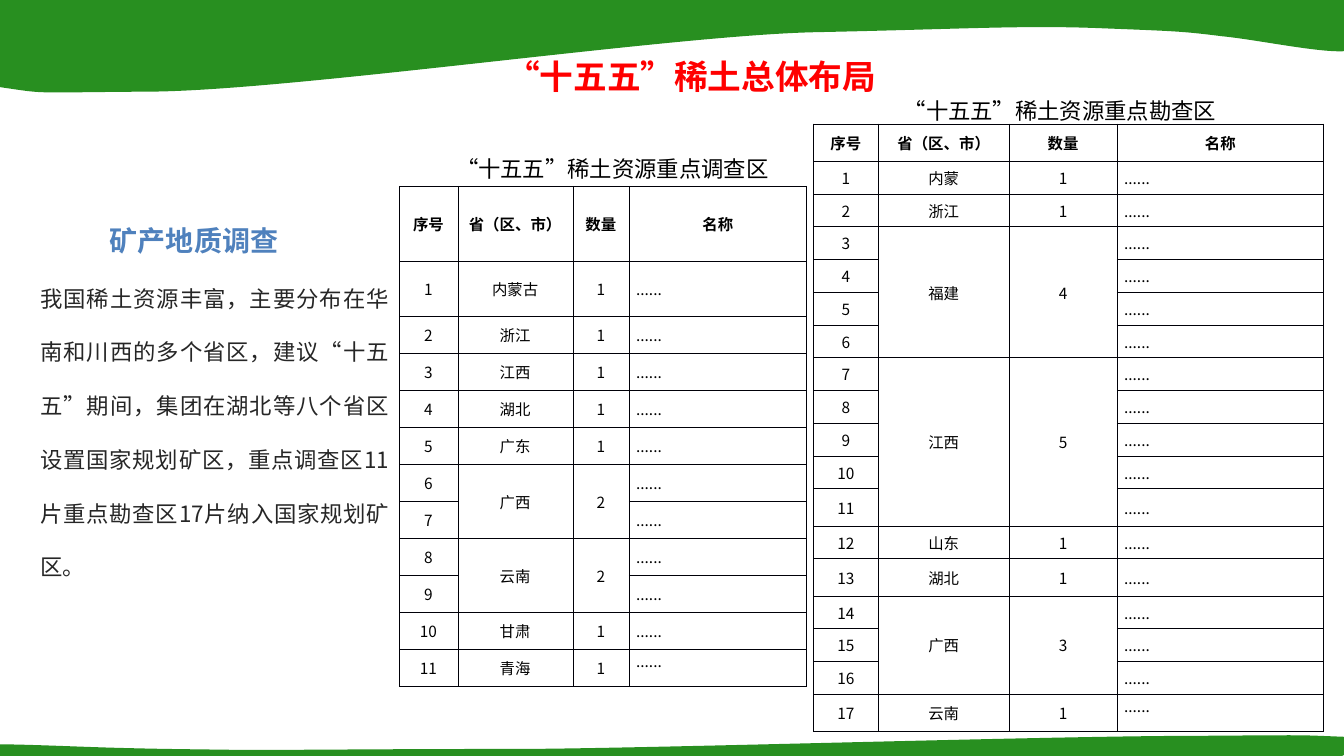
from lxml import etree
from pptx import Presentation
from pptx.dml.color import RGBColor
from pptx.enum.text import MSO_ANCHOR as ANCHOR, PP_ALIGN as ALIGN
from pptx.oxml.ns import qn
from pptx.util import Inches, Pt

FONT = "Noto Sans CJK SC"
GREEN = RGBColor(0x28, 0x8F, 0x20)
BLUE = RGBColor(0x4F, 0x81, 0xBD)
RED = RGBColor(0xFF, 0x00, 0x00)
GREY = RGBColor(0x26, 0x26, 0x26)
BLACK = RGBColor(0x00, 0x00, 0x00)
BORDER = RGBColor(0x00, 0x00, 0x08)

prs = Presentation()
prs.slide_width, prs.slide_height = Inches(13.33), Inches(7.5)
s = prs.slides.add_slide(prs.slide_layouts[6])


def add_run(p, text, size, color, bold=False):
    r = p.add_run()
    r.text = text
    r.font.size, r.font.bold, r.font.name = Pt(size), bold, FONT
    r.font.color.rgb = color
    etree.SubElement(r.font._element, qn("a:ea"), typeface=FONT)


def add_text(box, text, size, color, bold=False, align=ALIGN.LEFT, inset=True):
    sp = s.shapes.add_textbox(*[Inches(v) for v in box])
    tf = sp.text_frame
    tf.word_wrap = True
    if not inset:
        tf.margin_left = tf.margin_right = tf.margin_top = tf.margin_bottom = 0
    p = tf.paragraphs[0]
    p.alignment = align
    add_run(p, text, size, color, bold)
    return tf


# Green waves: start, Bezier points in threes, straight corners
waves = [
    ((13.44, 0.48),
     [(13.33, 0.58), (12.53, 0.4), (12.12, 0.36),
      (11.72, 0.31), (11.67, 0.31), (10.9, 0.28),
      (10.13, 0.25), (9.53, 0.29), (8.09, 0.32),
      (6.65, 0.35), (2.84, 0.91), (1.45, 0.91),
      (0.05, 0.92), (0.6, 0.94), (-0.33, 0.82)],
     [(0, -0.02), (13.33, -0.02)]),
    ((-0.13, 7.39),
     [(-0.02, 7.37), (0.78, 7.41), (1.19, 7.42),
      (1.59, 7.43), (1.64, 7.43), (2.41, 7.44),
      (3.18, 7.44), (3.78, 7.43), (5.22, 7.43),
      (6.66, 7.42), (10.47, 7.3), (11.86, 7.3),
      (13.26, 7.29), (12.71, 7.29), (13.64, 7.32)],
     [(13.31, 7.5), (-0.02, 7.5)]),
]
for start, curve, corners in waves:
    fb = s.shapes.build_freeform(Inches(start[0]), Inches(start[1]))
    fb.add_line_segments([(Inches(x), Inches(y)) for x, y in curve + corners], close=True)
    sp = fb.convert_to_shape()
    sp.shadow.inherit = False
    sp.fill.solid()
    sp.fill.fore_color.rgb = GREEN
    sp.line.fill.background()
    # Turn each three curve points into one Bezier segment
    segments = list(sp._element.iter(qn("a:lnTo")))[:len(curve)]
    for i in range(0, len(curve), 3):
        bezier = etree.Element(qn("a:cubicBezTo"))
        segments[i].addprevious(bezier)
        for seg in segments[i:i + 3]:
            bezier.append(seg[0])
            seg.getparent().remove(seg)

# Left-hand text
tf = add_text((1.09, 2.06, 2.93, 0.65), "矿产地质调查", 20, BLUE, True, inset=False)
tf.vertical_anchor = ANCHOR.MIDDLE
tf = add_text((0.4, 2.56, 3.46, 4.33),
              "我国稀土资源丰富，主要分布在华南和川西的多个省区，建议“十五五”期间，"
              "集团在湖北等八个省区设置国家规划矿区，重点调查区11片重点勘查区17片纳入国家规划矿区。",
              16, GREY, align=ALIGN.JUSTIFY, inset=False)
tf.paragraphs[0].line_spacing = 2.0

# Title and table captions
add_text((3.52, 0.51, 6.67, 0.5), "“十五五”稀土总体布局", 24, RED, True, ALIGN.CENTER)
for x, y, caption in [(3.13, 1.49, "“十五五”稀土资源重点调查区"),
                      (7.57, 0.91, "“十五五”稀土资源重点勘查区")]:
    tf = add_text((x, y, 5.56, 0.37), caption, 16, BLACK, align=ALIGN.CENTER)
    tf.paragraphs[0]._p.get_or_add_pPr().set("indent", str(Inches(0.33)))

# Tables: each province spans as many rows as its count
HEADER = ["序号", "省（区、市）", "数量", "名称"]
survey = [("内蒙古", 1), ("浙江", 1), ("江西", 1), ("湖北", 1), ("广东", 1),
          ("广西", 2), ("云南", 2), ("甘肃", 1), ("青海", 1)]
explore = [("内蒙", 1), ("浙江", 1), ("福建", 4), ("江西", 5), ("山东", 1),
           ("湖北", 1), ("广西", 3), ("云南", 1)]
survey_rows = [0.74, 0.55] + [(4.96 - 0.74 - 0.55) / 10] * 10
tall_rows = (0, 11, 13, 17)
short_row = (6.03 - 0.37 * len(tall_rows)) / 14
explore_rows = [0.37 if i in tall_rows else short_row for i in range(18)]

tables = [
    ((3.96, 1.85, 4.04, 4.96), [0.58, 1.14, 0.56, 1.76], survey_rows, survey, 0.25, 1, ALIGN.JUSTIFY),
    ((8.07, 1.23, 5.06, 6.03), [0.64, 1.3, 1.07, 2.05], explore_rows, explore, 0.5, 0.5, ALIGN.LEFT),
]
for box, widths, heights, provinces, thin, outer, last_align in tables:
    last = len(heights) - 1
    tbl = s.shapes.add_table(last + 1, 4, *[Inches(v) for v in box]).table
    tbl.first_row = tbl.horz_banding = False
    for col, w in zip(tbl.columns, widths):
        col.width = Inches(w)
    for row, h in zip(tbl.rows, heights):
        row.height = Inches(h)

    grid = [HEADER]
    for name, count in provinces:
        top = len(grid)
        for k in range(count):
            first = k == 0
            grid.append([str(top + k), name if first else "", str(count) if first else "", "......"])
        if count > 1:
            for c in (1, 2):
                tbl.cell(top, c).merge(tbl.cell(top + count - 1, c))

    for i, texts in enumerate(grid):
        for j, text in enumerate(texts):
            cell = tbl.cell(i, j)
            cell.margin_left = cell.margin_right = Inches(0.07)
            cell.margin_top = cell.margin_bottom = 0
            cell.vertical_anchor = ANCHOR.MIDDLE
            p = cell.text_frame.paragraphs[0]
            p.alignment = ALIGN.LEFT if j == 3 and i else ALIGN.CENTER
            if j == 3 and i == last:
                cell.vertical_anchor = ANCHOR.TOP
                p.alignment = last_align
            if text:
                add_run(p, text, 11, BLACK, i == 0)
            # Borders go before the fill
            for side in "LRTB":
                edge = (side == "T" and i == 0) or (side == "B" and i == last)
                ln = etree.SubElement(cell._tc.get_or_add_tcPr(), qn("a:ln" + side),
                                      w=str(Pt(outer if edge else thin)))
                fill = etree.SubElement(ln, qn("a:solidFill"))
                etree.SubElement(fill, qn("a:srgbClr"), val=str(BORDER))
            cell.fill.background()

prs.save("out.pptx")
